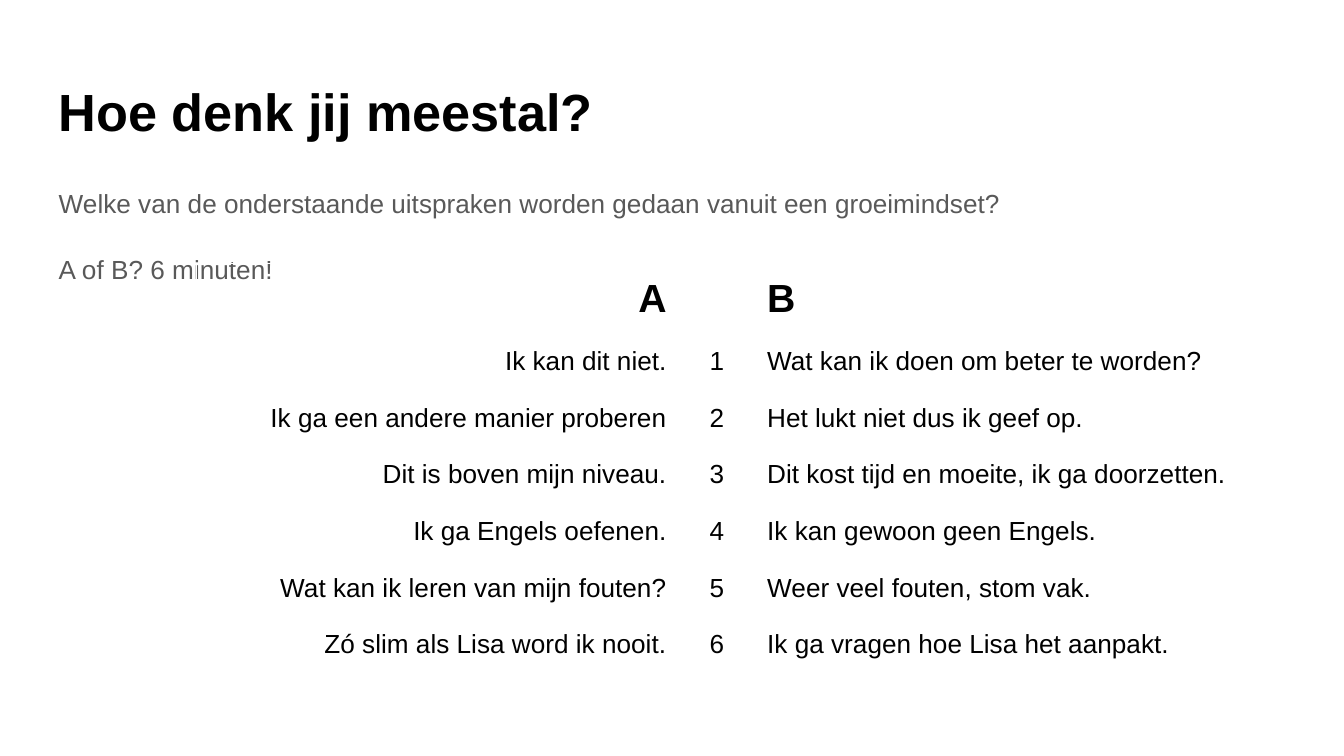
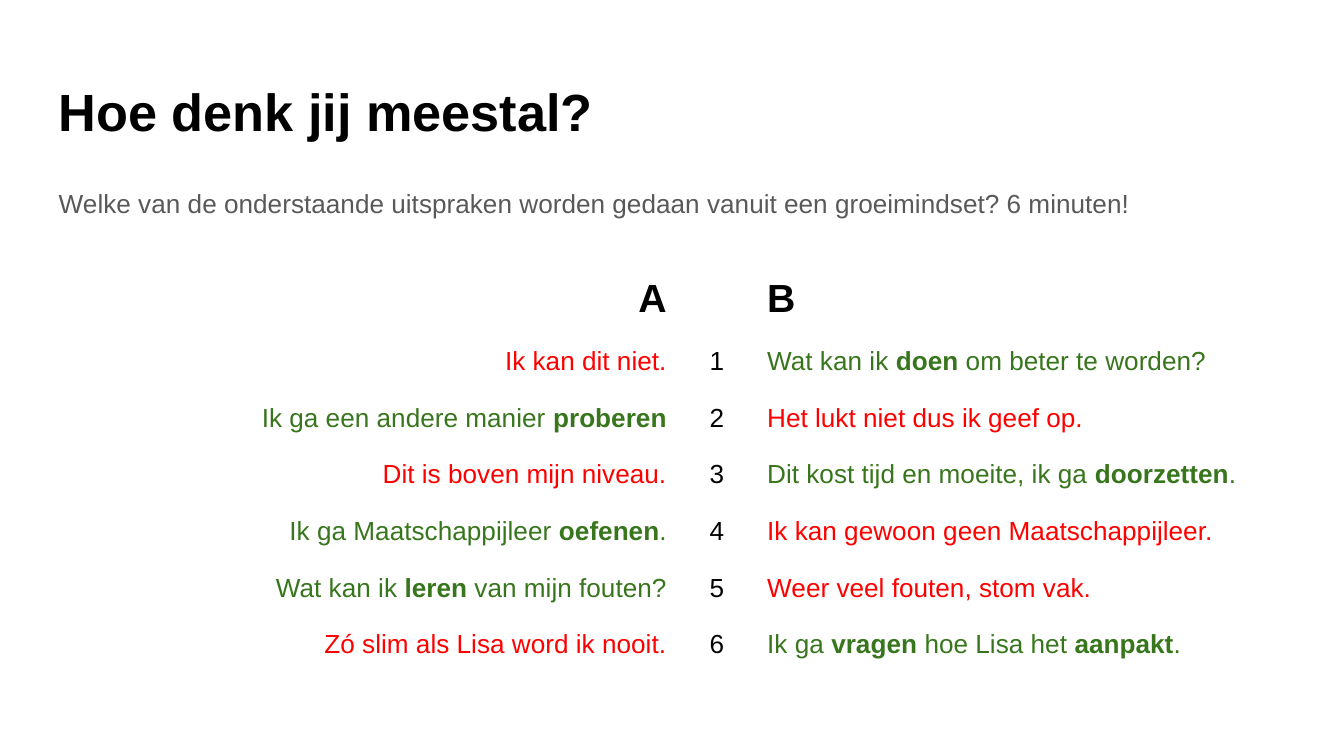
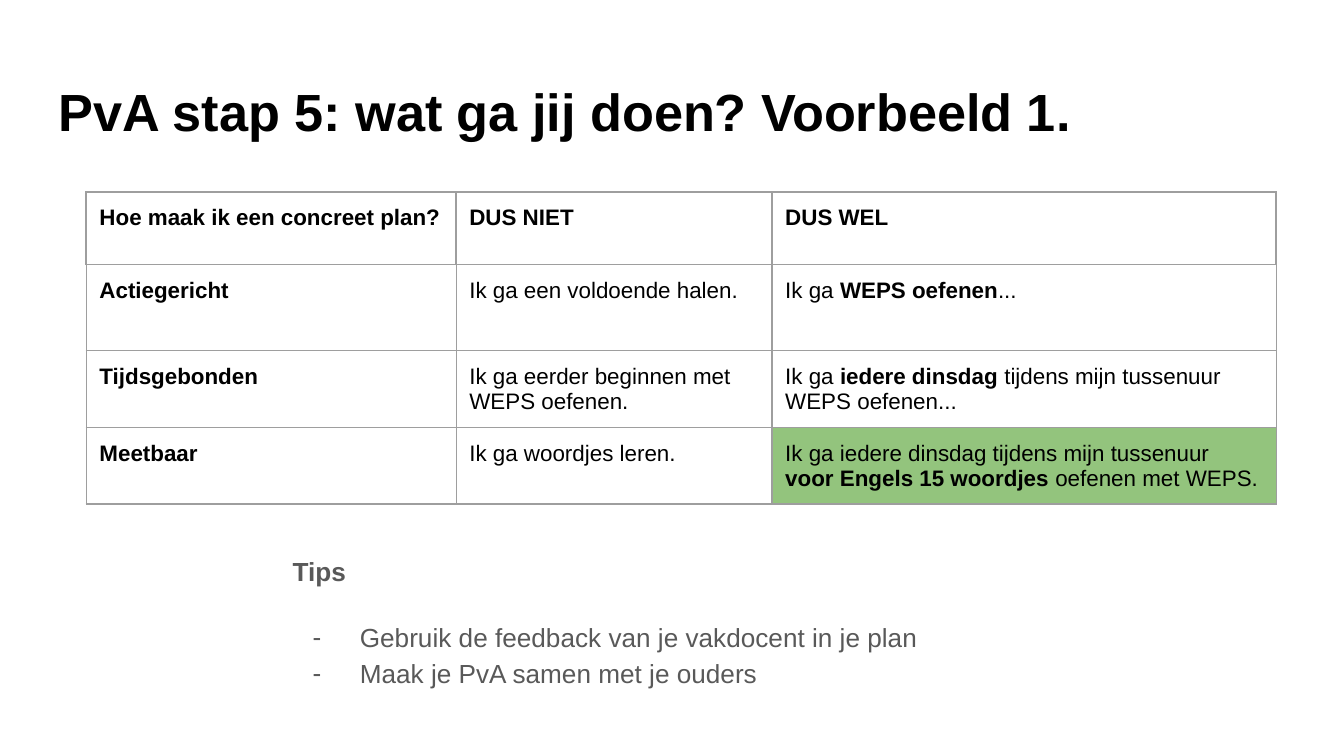
"""Build three lesson slides on growth mindset and concrete planning."""
from dataclasses import dataclass

from lxml.etree import SubElement
from pptx import Presentation
from pptx.dml.color import RGBColor
from pptx.enum.text import MSO_ANCHOR, MSO_AUTO_SIZE, PP_ALIGN
from pptx.oxml.ns import qn
from pptx.util import Cm, Pt


@dataclass(frozen=True)
class Theme:
    font: str = "Arial"
    ink: str = "000000"
    muted: str = "595959"
    fixed: str = "FF0000"
    growth: str = "38761D"
    highlight: str = "93C47D"
    rule: str = "9E9E9E"
    title_size: float = 28
    column_size: float = 21
    body_size: float = 14
    plan_size: float = 12
    inset: float = 0.25
    left: float = 0.86
    width: float = 23.67


STATEMENTS = [
    ("Ik kan dit niet.", "Wat kan ik **doen **om beter te worden?"),
    ("Ik ga een andere manier **proberen**", "Het lukt niet dus ik geef op."),
    ("Dit is boven mijn niveau.", "Dit kost tijd en moeite, ik ga **doorzetten**."),
    ("Ik ga {subject} **oefenen**.", "Ik kan gewoon geen {subject}."),
    ("Wat kan ik **leren **van mijn fouten?", "Weer veel fouten, stom vak."),
    ("Zó slim als Lisa word ik nooit.", "Ik ga **vragen **hoe Lisa het **aanpakt**."),
]

PLAN = [
    ("**Hoe maak ik een concreet plan?**", "**DUS NIET**", "**DUS WEL**"),
    ("**Actiegericht**", "Ik ga een voldoende halen.", "Ik ga **WEPS oefenen**..."),
    ("**Tijdsgebonden**", "Ik ga eerder beginnen met WEPS oefenen.",
     "Ik ga **iedere dinsdag** tijdens mijn tussenuur WEPS oefenen..."),
    ("**Meetbaar**", "Ik ga woordjes leren.",
     "Ik ga iedere dinsdag tijdens mijn tussenuur "
     "**voor Engels 15 woordjes** oefenen met WEPS."),
]


class LessonDeck:
    def __init__(self, theme):
        self.theme = theme
        self.deck = Presentation()
        self.deck.slide_width, self.deck.slide_height = Cm(25.4), Cm(14.29)
        self.slide = None

    def add_slide(self, title):
        theme = self.theme
        self.slide = self.deck.slides.add_slide(self.deck.slide_layouts[1])
        box = self.slide.shapes.title
        self.place(box, theme.left, 1.24, theme.width, 1.6)
        self.fill_para(box.text_frame.paragraphs[0], f"**{title}**", theme.title_size, theme.ink)

    def place(self, box, left, top, width, height):
        box.left, box.top, box.width, box.height = map(Cm, (left, top, width, height))
        frame = box.text_frame
        frame.word_wrap = True
        frame.auto_size = MSO_AUTO_SIZE.NONE
        frame.vertical_anchor = MSO_ANCHOR.TOP
        self.set_margins(frame)

    def set_margins(self, target):
        inset = Cm(self.theme.inset)
        target.margin_left = target.margin_right = inset
        target.margin_top = target.margin_bottom = inset

    def fill_para(self, para, text, size, color, align=PP_ALIGN.LEFT):
        para.alignment = align
        pieces = [(piece, index % 2 == 1)
                  for index, piece in enumerate(text.split("**")) if piece]
        weights = {bold for _, bold in pieces}
        font = para.font
        font.name, font.size = self.theme.font, Pt(size)
        font.color.rgb = RGBColor.from_string(color)
        if len(weights) == 1:
            font.bold = pieces[0][1]
        for piece, bold in pieces:
            span = para.add_run()
            span.text = piece
            if len(weights) > 1:
                span.font.bold = bold

    def set_bullet(self, para, mark):
        properties = para._p.get_or_add_pPr()
        properties.set("marL", str(Cm(1.27) if mark else 0))
        properties.set("indent", str(-Cm(0.89) if mark else 0))
        if not mark:
            SubElement(properties, qn("a:buNone"))
            return
        color = SubElement(properties, qn("a:buClr"))
        SubElement(color, qn("a:srgbClr"), val=self.theme.muted)
        SubElement(properties, qn("a:buChar"), char=mark)

    def add_body(self, place, lines, mark=None):
        box = self.slide.placeholders[1]
        self.place(box, *place)
        frame = box.text_frame
        for index, text in enumerate(lines):
            para = frame.add_paragraph() if index else frame.paragraphs[0]
            para.line_spacing = 1.15
            para.space_before = Pt(16 if index == 1 else 0)
            self.set_bullet(para, mark if index else None)
            self.fill_para(para, text, self.theme.body_size, self.theme.muted)

    def add_table(self, left, top, widths, heights):
        shape = self.slide.shapes.add_table(
            len(heights), len(widths), Cm(left), Cm(top), Cm(sum(widths)), Cm(sum(heights)))
        table = shape.table
        table.first_row = table.horz_banding = False
        for column, width in zip(table.columns, widths):
            column.width = Cm(width)
        for row, height in zip(table.rows, heights):
            row.height = Cm(height)
        for cell in table.iter_cells():
            cell.fill.background()
            self.set_margins(cell)
        return table

    def fill_cell(self, cell, text, size, color=None, align=PP_ALIGN.LEFT):
        para = cell.text_frame.paragraphs[0]
        self.fill_para(para, text, size, color or self.theme.ink, align)

    def set_borders(self, cell, top_width, width):
        properties = cell._tc.get_or_add_tcPr()
        for index, side in enumerate(("lnL", "lnR", "lnT", "lnB")):
            points = top_width if side == "lnT" else width
            line = properties.makeelement(qn(f"a:{side}"), {"w": str(Pt(points))})
            fill = SubElement(line, qn("a:solidFill"))
            SubElement(fill, qn("a:srgbClr"), val=self.theme.rule)
            properties.insert(index, line)

    def add_statements(self, subject, reveal):
        theme = self.theme
        table = self.add_table(3.71, 4.98, (9.14, 1.4, 10.29), [1.07] * (len(STATEMENTS) + 1))
        sides = ((0, "A", PP_ALIGN.RIGHT), (2, "B", PP_ALIGN.LEFT))
        for column, letter, align in sides:
            self.fill_cell(table.cell(0, column), f"**{letter}**", theme.column_size, align=align)
        for number, pair in enumerate(STATEMENTS, 1):
            self.fill_cell(table.cell(number, 1), str(number), theme.body_size,
                           align=PP_ALIGN.CENTER)
            for (column, _, align), statement in zip(sides, pair):
                text = statement.format(subject=subject)
                color = theme.growth if "**" in text else theme.fixed
                if not reveal:
                    text, color = text.replace("**", ""), theme.ink
                self.fill_cell(table.cell(number, column), text, theme.body_size, color, align)

    def add_plan(self):
        theme = self.theme
        table = self.add_table(1.63, 3.63, (6.99, 5.97, 9.53), (1.37, 1.63, 1.37, 1.19))
        for row, texts in enumerate(PLAN):
            for column, text in enumerate(texts):
                cell = table.cell(row, column)
                self.fill_cell(cell, text, theme.plan_size)
                self.set_borders(cell, 1 if row < 2 else 0.75, 0.75 if row else 1)
        goal = table.cell(len(PLAN) - 1, 2)
        goal.fill.solid()
        goal.fill.fore_color.rgb = RGBColor.from_string(theme.highlight)


def main():
    theme = Theme()
    lesson = LessonDeck(theme)
    question = "Welke van de onderstaande uitspraken worden gedaan vanuit een groeimindset?"
    quizzes = (
        ("Engels", False, [question, "A of B? 6 minuten!"]),
        ("Maatschappijleer", True, [f"{question} 6 minuten!"]),
    )
    for subject, reveal, lines in quizzes:
        lesson.add_slide("Hoe denk jij meestal?")
        lesson.add_statements(subject, reveal)
        lesson.add_body((theme.left, 3.2, 24.54, 1.32), lines)

    lesson.add_slide("PvA stap 5: wat ga jij doen? Voorbeeld 1.")
    lesson.add_plan()
    lesson.add_body((5.28, 10.16, theme.width, 3.02), [
        "**Tips**",
        "Gebruik de feedback van je vakdocent in je plan",
        "Maak je PvA samen met je ouders",
    ], mark="-")
    lesson.deck.save("out.pptx")


if __name__ == "__main__":
    main()
